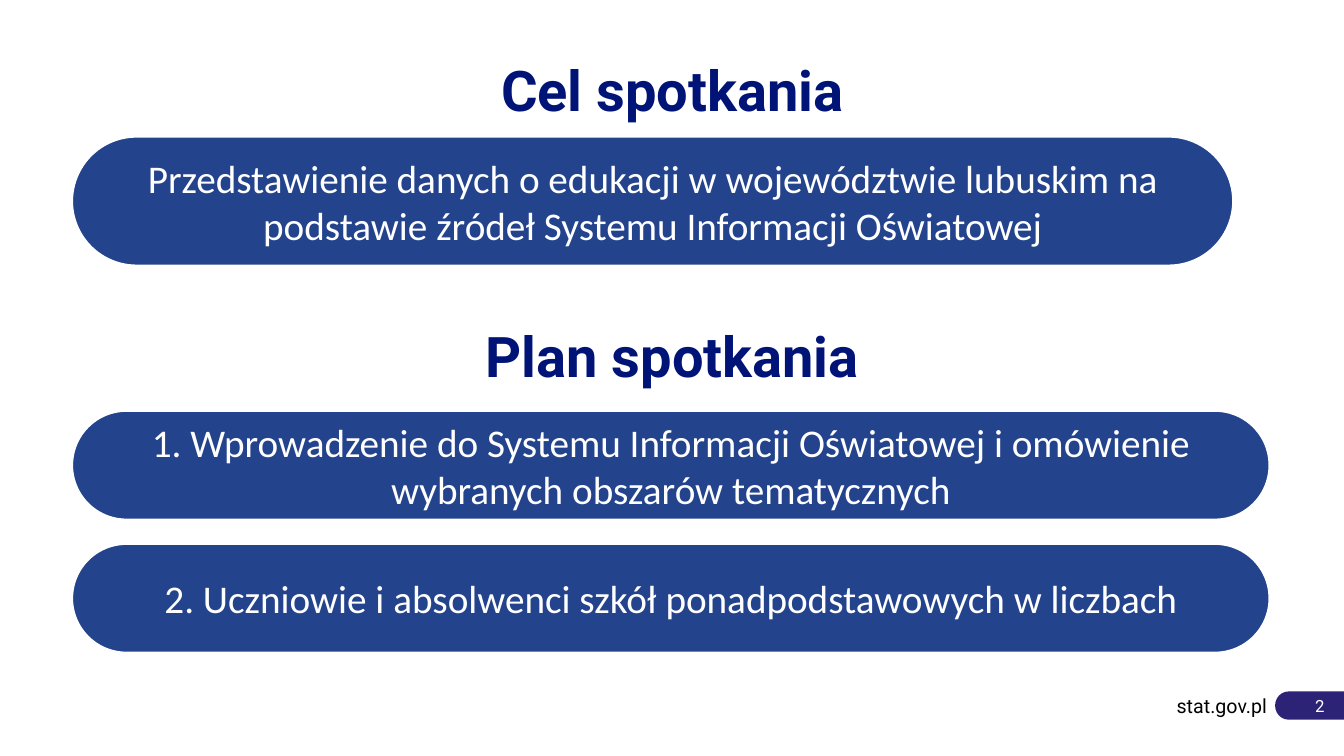
from pptx import Presentation
from pptx.dml.color import RGBColor
from pptx.enum.shapes import MSO_SHAPE
from pptx.enum.text import MSO_ANCHOR, PP_ALIGN
from pptx.util import Pt

ROUNDED, TERMINATOR = MSO_SHAPE.ROUNDED_RECTANGLE, MSO_SHAPE.FLOWCHART_TERMINATOR
MIDDLE = MSO_ANCHOR.MIDDLE
CENTER, RIGHT = PP_ALIGN.CENTER, PP_ALIGN.RIGHT

# Content
GOAL_HEADING = "Cel spotkania"
GOAL = ("Przedstawienie danych o edukacji w województwie lubuskim na "
        "podstawie źródeł Systemu Informacji Oświatowej")
PLAN_HEADING = "Plan spotkania"
PLAN = [
    "1. Wprowadzenie do Systemu Informacji Oświatowej i omówienie "
    "wybranych obszarów tematycznych",
    "2. Uczniowie i absolwenci szkół ponadpodstawowych w liczbach",
]
SITE, PAGE = "stat.gov.pl", "2"

# Formats
HEADING = {"name": "Roboto", "size": Pt(40), "bold": True, "color": "001377"}
BODY = {"name": "Calibri", "size": Pt(28), "color": "FFFFFF"}
SITE_FONT = {"name": "Roboto", "size": Pt(14), "color": "000000"}
PAGE_FONT = {"name": "Roboto", "size": Pt(12), "color": "FFFFFF"}
BAR_FILL, TAB_FILL, BAR_LINE = "24438D", "2C2276", "FFFFFF"

# Layout, in points
BAR_LEFT = 51.12
PLAN_TOP, PLAN_WIDTH, PLAN_HEIGHT, PLAN_STEP = 293.04, 856.08, 78.48, 95.04


def rgb(value):
    return RGBColor.from_string(value)


def write(sp, text, fmt, align, margins):
    tf = sp.text_frame
    tf.word_wrap = True
    tf.vertical_anchor = MIDDLE
    tf.margin_left, tf.margin_right = Pt(margins[0]), Pt(margins[1])
    p = tf.paragraphs[0]
    p.alignment = align
    r = p.add_run()
    r.text = text
    for key, value in fmt.items():
        if key == "color":
            r.font.color.rgb = rgb(value)
        else:
            setattr(r.font, key, value)


def add_text(box, text, fmt, align):
    sp = s.shapes.add_textbox(*map(Pt, box))
    write(sp, text, fmt, align, (0, 0))


def add_filled(kind, box, fill):
    sp = s.shapes.add_shape(kind, *map(Pt, box))
    sp.shadow.inherit = False
    sp.fill.solid()
    sp.fill.fore_color.rgb = rgb(fill)
    return sp


def add_bar(box, text):
    sp = add_filled(ROUNDED, box, BAR_FILL)
    sp.adjustments[0] = 0.5
    sp.line.color.rgb = rgb(BAR_LINE)
    sp.line.width = Pt(2.25)
    write(sp, text, BODY, CENTER, (7.2, 7.2))


prs = Presentation()
prs.slide_width, prs.slide_height = Pt(960), Pt(540)
s = prs.slides.add_slide(prs.slide_layouts[6])

# Footer
tab = add_filled(TERMINATOR, (910.8, 493.92, 59.76, 20.16), TAB_FILL)
tab.line.fill.background()
write(tab, PAGE, PAGE_FONT, RIGHT, (2.88, 21.6))
add_text((834.48, 491.76, 70.56, 24.48), SITE, SITE_FONT, RIGHT)

# Headings
for top, heading in ((34, GOAL_HEADING), (223.5, PLAN_HEADING)):
    add_text((26.64, top, 907.2, 60), heading, HEADING, CENTER)

# Goal and plan bars
add_bar((BAR_LEFT, 97.2, 830.16, 92.88), GOAL)
for i, item in enumerate(PLAN):
    add_bar((BAR_LEFT, PLAN_TOP + i * PLAN_STEP, PLAN_WIDTH, PLAN_HEIGHT), item)

prs.save("out.pptx")
